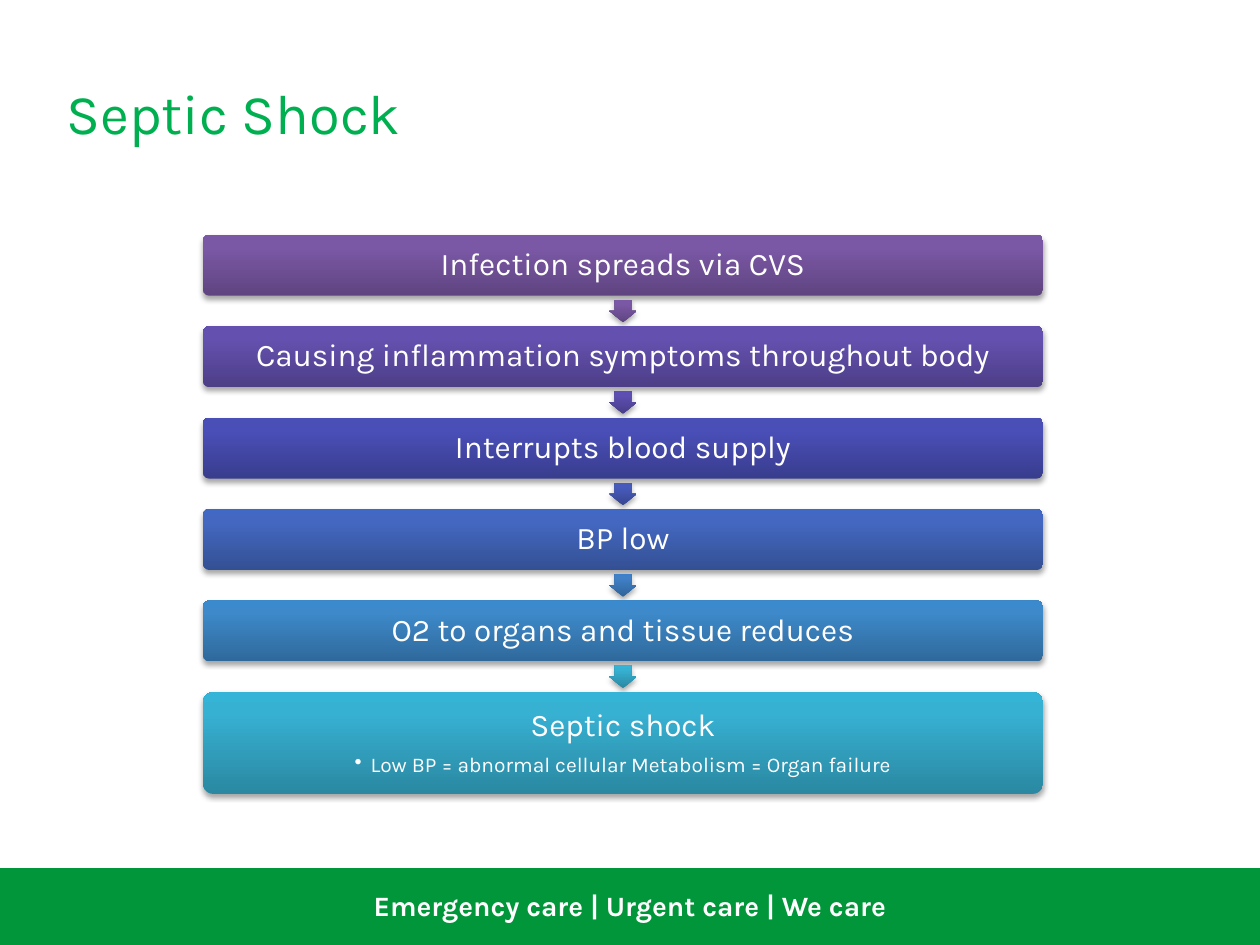
from pptx import Presentation
from pptx.dml.color import RGBColor
from pptx.enum.shapes import MSO_SHAPE
from pptx.enum.text import MSO_ANCHOR, PP_ALIGN
from pptx.oxml import parse_xml
from pptx.oxml.ns import nsdecls
from pptx.util import Pt

RECTANGLE = MSO_SHAPE.RECTANGLE
ROUNDED = MSO_SHAPE.ROUNDED_RECTANGLE
ARROW = MSO_SHAPE.RIGHT_ARROW
TOP, MIDDLE = MSO_ANCHOR.TOP, MSO_ANCHOR.MIDDLE
LEFT, CENTER = PP_ALIGN.LEFT, PP_ALIGN.CENTER

WHITE = RGBColor(0xFF, 0xFF, 0xFF)
BAND_GREEN = RGBColor(0x00, 0x96, 0x39)
TITLE_GREEN = RGBColor(0x00, 0xB0, 0x50)

# Gradients run from the dark bottom edge to the light top edge
PURPLE = ("5F4480", "7B58A6", "7C57A8")
VIOLET = ("4D3E87", "6451AF", "6450B2")
VIOLET_ARROW = ("483D89", "5D4FB1", "5C4EB4")
INDIGO = ("393D8E", "4A4FB8", "484EBB")
INDIGO_ARROW = ("374691", "475BBC", "455ABF")
BLUE = ("345094", "4468C1", "4168C4")
BLUE_ARROW = ("306399", "3F80C7", "3C80CB")
SKY = ("2F699B", "3D89C9", "3B8ACD")
TEAL = ("2A88A2", "37B1D2", "34B4D6")


def paint(shape, colours):
    """Give a shape its vertical gradient and soft shadow, without outline."""
    stops = "".join(
        f'<a:gs pos="{place * 1000}"><a:srgbClr val="{colour}"/></a:gs>'
        for place, colour in zip((0, 80, 100), colours))
    shape.line.fill.background()
    shape.fill.background()
    properties = shape._element.spPr
    properties.replace(properties.find("{*}noFill"), parse_xml(
        f'<a:gradFill {nsdecls("a")} rotWithShape="0"><a:gsLst>{stops}</a:gsLst>'
        '<a:lin ang="16200000" scaled="0"/></a:gradFill>'))
    shape.shadow.inherit = False
    properties.find("{*}effectLst").append(parse_xml(
        f'<a:outerShdw {nsdecls("a")} blurRad="{Pt(3.1)}" dist="{Pt(1.8)}" '
        'dir="5400000" rotWithShape="0"><a:srgbClr val="000000">'
        '<a:alpha val="35000"/></a:srgbClr></a:outerShdw>'))


def write(para, text, formats, align=CENTER):
    para.alignment = align
    span = para.add_run()
    span.text = text
    span.font.color.rgb = formats["colour"]
    for name in ("size", "bold"):
        setattr(span.font, name, formats[name])
    span.font.name = "Karla"


deck = Presentation()
deck.slide_width, deck.slide_height = Pt(720), Pt(540)
page = deck.slides.add_slide(deck.slide_layouts[6])

# Footer band and motto
band = page.shapes.add_shape(RECTANGLE, 0, Pt(496.8), Pt(720), Pt(43.2))
band.shadow.inherit = False
band.fill.solid()
band.fill.fore_color.rgb = BAND_GREEN
band.line.color.rgb = BAND_GREEN
band.line.width = Pt(2)
motto = page.shapes.add_textbox(0, Pt(504), Pt(720), Pt(26.6))
motto.text_frame.word_wrap = True
write(motto.text_frame.paragraphs[0], "Emergency care | Urgent care | We care",
      {"size": Pt(16), "bold": True, "colour": WHITE})

# Title
title = page.shapes.add_textbox(Pt(31), Pt(37.4), Pt(585.4), Pt(90))
for name, value in {"word_wrap": True, "vertical_anchor": TOP,
                    "margin_top": Pt(7.6)}.items():
    setattr(title.text_frame, name, value)
write(title.text_frame.paragraphs[0], "Septic Shock",
      {"size": Pt(32), "bold": False, "colour": TITLE_GREEN}, LEFT)

# Steps: text, box gradient, gradient of the arrow that follows
STEPS = [
    ("Infection spreads via CVS", PURPLE, PURPLE),
    ("Causing inflammation symptoms throughout body", VIOLET, VIOLET_ARROW),
    ("Interrupts blood supply", INDIGO, INDIGO_ARROW),
    ("BP low", BLUE, BLUE_ARROW),
    ("O2 to organs and tissue reduces", SKY, TEAL),
    ("Septic shock", TEAL, None),
]
STEP_TOP, PITCH = 134.2, 52.25
BOX_LEFT, BOX_WIDTH, BOX_HEIGHT, LAST_HEIGHT = 116, 480, 34.8, 58.2
ARROW_LENGTH, ARROW_WIDTH = 13, 15.6
STEP_FORMAT = {"size": Pt(18), "bold": False, "colour": WHITE}
DETAIL_FORMAT = {"size": Pt(12), "bold": False, "colour": WHITE}
FRAME_FORMAT = {"word_wrap": True, "vertical_anchor": MIDDLE,
                "margin_left": Pt(6), "margin_right": Pt(6),
                "margin_top": Pt(5), "margin_bottom": Pt(5)}

for index, (text, box_colours, arrow_colours) in enumerate(STEPS):
    top = STEP_TOP + index * PITCH
    height = BOX_HEIGHT if arrow_colours else LAST_HEIGHT
    box = page.shapes.add_shape(ROUNDED, Pt(BOX_LEFT), Pt(top),
                                Pt(BOX_WIDTH), Pt(height))
    box.adjustments[0] = 0.1
    paint(box, box_colours)
    for name, value in FRAME_FORMAT.items():
        setattr(box.text_frame, name, value)
    para = box.text_frame.paragraphs[0]
    para.line_spacing = 0.9
    para.space_after = Pt(6.3)
    write(para, text, STEP_FORMAT)

    if arrow_colours:
        # The arrow is turned to point down, centred in the gap
        middle = top + (BOX_HEIGHT + PITCH) / 2
        arrow = page.shapes.add_shape(
            ARROW, Pt(BOX_LEFT + (BOX_WIDTH - ARROW_LENGTH) / 2),
            Pt(middle - ARROW_WIDTH / 2), Pt(ARROW_LENGTH), Pt(ARROW_WIDTH))
        arrow.rotation = 90
        arrow.adjustments[0], arrow.adjustments[1] = 0.6, 0.5
        paint(arrow, arrow_colours)

# Bulleted detail in the last box
detail = box.text_frame.add_paragraph()
detail.level = 1
detail.line_spacing = 0.9
detail.space_after = Pt(1.8)
layout = detail._p.get_or_add_pPr()
layout.set("marL", str(Pt(9)))
layout.set("indent", str(Pt(-9)))
layout.append(parse_xml(f'<a:buChar {nsdecls("a")} char="•"/>'))
write(detail, "Low BP = abnormal cellular Metabolism = Organ failure", DETAIL_FORMAT)

deck.save("out.pptx")
